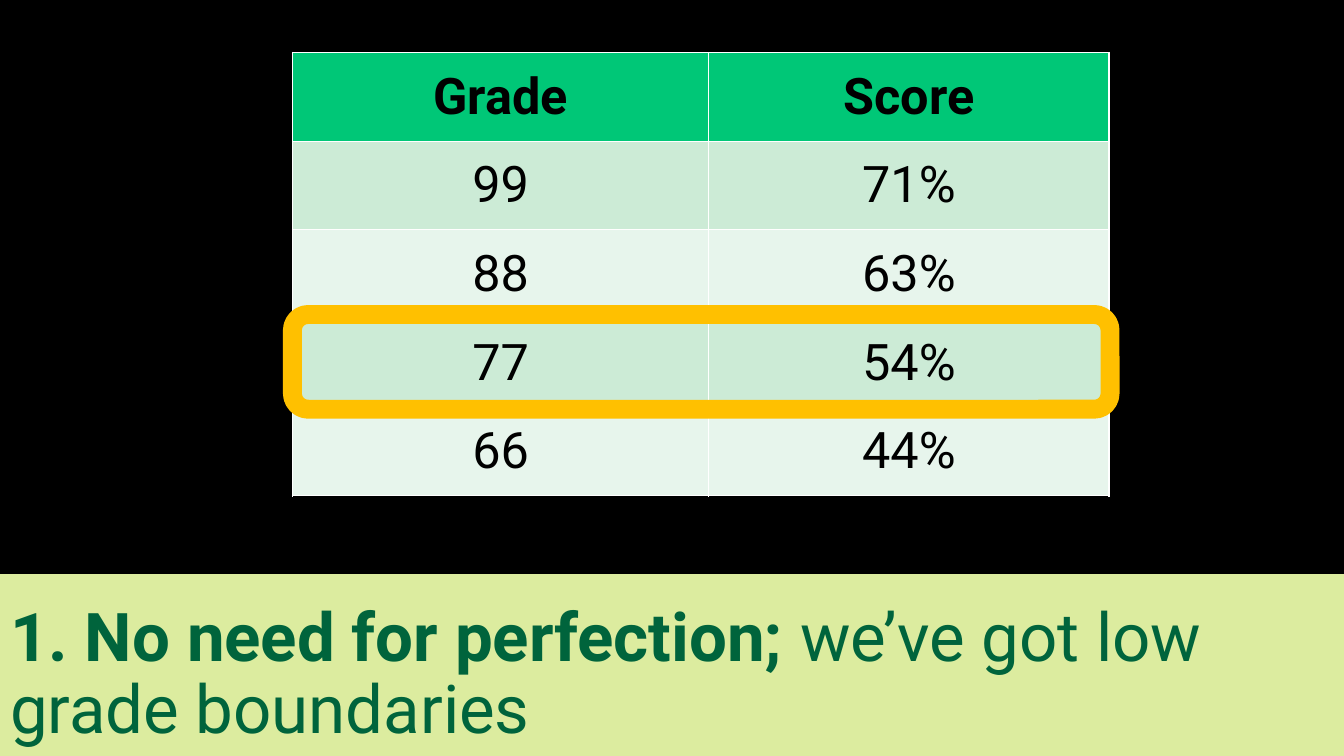
from pptx import Presentation
from pptx.dml.color import RGBColor
from pptx.enum.shapes import MSO_SHAPE
from pptx.enum.text import MSO_ANCHOR, MSO_AUTO_SIZE, PP_ALIGN
from pptx.util import Inches, Pt

FONT = "Roboto"
GRADE_SCORES = [
    ("Grade", "Score"),
    ("99", "71%"),
    ("88", "63%"),
    ("77", "54%"),
    ("66", "44%"),
]
HEADER_FILL = "00C777"
BAND_FILLS = ["E7F5EC", "CCEBD6"]
COLUMN_WIDTHS = [4.13, 3.97]
ROW_HEIGHT = 0.88


def paint(fill, color):
    """Give a fill one solid colour."""
    fill.solid()
    fill.fore_color.rgb = RGBColor.from_string(color)


def style_font(font, size, color, bold=None):
    """Set the typeface, size, colour and weight of a font."""
    font.name = FONT
    font.size = Pt(size)
    font.color.rgb = RGBColor.from_string(color)
    font.bold = bold


def add_grade_table(slide, left, top):
    """Add the table of grades and the score each one needs."""
    rows, columns = len(GRADE_SCORES), len(COLUMN_WIDTHS)
    table = slide.shapes.add_table(
        rows, columns, Inches(left), Inches(top),
        Inches(sum(COLUMN_WIDTHS)), Inches(rows * ROW_HEIGHT),
    ).table
    for column, width in zip(table.columns, COLUMN_WIDTHS):
        column.width = Inches(width)
    for row_index, values in enumerate(GRADE_SCORES):
        is_header = row_index == 0
        table.rows[row_index].height = Inches(ROW_HEIGHT)
        for column_index, value in enumerate(values):
            cell = table.cell(row_index, column_index)
            paint(cell.fill, HEADER_FILL if is_header else BAND_FILLS[row_index % 2])
            cell.vertical_anchor = MSO_ANCHOR.MIDDLE
            cell.text = value
            paragraph = cell.text_frame.paragraphs[0]
            paragraph.alignment = PP_ALIGN.CENTER
            style_font(paragraph.font, 36, "000000", is_header)


def add_box(slide, preset, left, top, width, height, line, line_width, fill=None):
    """Add an outlined preset shape, hollow unless a fill is given."""
    box = slide.shapes.add_shape(
        preset, Inches(left), Inches(top), Inches(width), Inches(height)
    )
    box.shadow.inherit = False
    box.line.color.rgb = RGBColor.from_string(line)
    box.line.width = Pt(line_width)
    if fill:
        paint(box.fill, fill)
    else:
        box.fill.background()


def place_title(slide, left, top, width, height, bold_part, plain_part):
    """Move the title in front of the other shapes and write its two parts."""
    title = slide.shapes.title
    title.element.getparent().append(title.element)
    title.left, title.top = Inches(left), Inches(top)
    title.width, title.height = Inches(width), Inches(height)
    frame = title.text_frame
    frame.word_wrap = True
    frame.auto_size = MSO_AUTO_SIZE.NONE
    frame.vertical_anchor = MSO_ANCHOR.MIDDLE
    paragraph = frame.paragraphs[0]
    paragraph.alignment = PP_ALIGN.LEFT
    paragraph.line_spacing = 0.9
    style_font(paragraph.font, 48, "00643C")
    for text, bold in ((bold_part, True), (plain_part, False)):
        run = paragraph.add_run()
        run.text = text
        run.font.bold = bold


def main():
    """Build the grade boundaries slide and save it."""
    deck = Presentation()
    deck.slide_width, deck.slide_height = Inches(13.33), Inches(7.5)
    slide = deck.slides.add_slide(deck.slide_layouts[5])
    paint(slide.background.fill, "000000")
    add_grade_table(slide, 2.9, 0.52)
    add_box(slide, MSO_SHAPE.ROUNDED_RECTANGLE, 2.9, 3.12, 8.11, 0.94, "FFC000", 13.5)
    add_box(slide, MSO_SHAPE.RECTANGLE, 0, 5.7, 13.33, 1.8, "DCEC9F", 1, "DCEC9F")
    place_title(
        slide, 0, 5.8, 13.33, 1.81,
        "1. No need for perfection; ", "we’ve got low grade boundaries",
    )
    deck.save("out.pptx")


if __name__ == "__main__":
    main()
